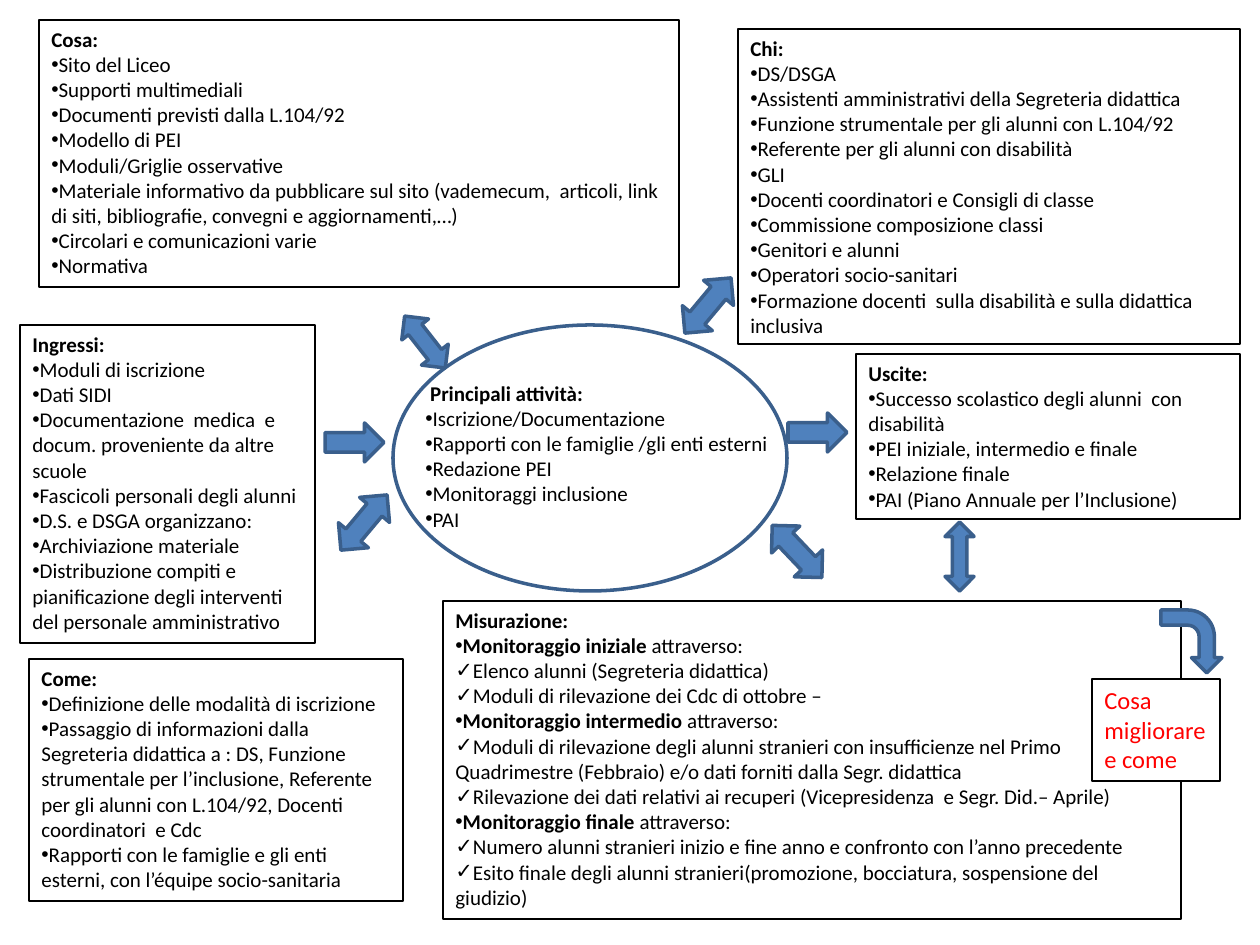
"""Build the process map slide for school inclusion activities."""
from lxml.etree import SubElement
from pptx import Presentation
from pptx.dml.color import RGBColor
from pptx.enum.shapes import MSO_SHAPE
from pptx.enum.text import MSO_AUTO_SIZE
from pptx.oxml.ns import qn
from pptx.util import Emu, Inches, Pt

BLACK = RGBColor(0x00, 0x00, 0x00)
WHITE = RGBColor(0xFF, 0xFF, 0xFF)
RED = RGBColor(0xFF, 0x00, 0x00)
BLUE = RGBColor(0x4F, 0x81, 0xBD)
DARK_BLUE = RGBColor(0x3A, 0x5F, 0x8C)
PIXELS_PER_INCH = 126

presentation = Presentation()
presentation.slide_width = Inches(10)
presentation.slide_height = Inches(7.5)
slide = presentation.slides.add_slide(presentation.slide_layouts[6])


def px(*lengths):
    return [Emu(round(length * Inches(1) / PIXELS_PER_INCH)) for length in lengths]


def add_paragraph(text_frame, text, bullet=None, bold="", size=12, color=BLACK):
    paragraph = text_frame.paragraphs[0]
    if paragraph.runs:
        paragraph = text_frame.add_paragraph()
    if bullet:
        properties = paragraph._p.get_or_add_pPr()
        properties.set("marL", "0")
        properties.set("indent", "0")
        SubElement(properties, qn("a:buFont")).set("typeface", "Arial")
        SubElement(properties, qn("a:buChar")).set("char", bullet)
    for content, is_bold in ((bold, True), (text, False)):
        if content:
            run = paragraph.add_run()
            run.text = content
            run.font.name = "Calibri"
            run.font.size = Pt(size)
            run.font.bold = is_bold
            run.font.color.rgb = color


ellipse = slide.shapes.add_shape(MSO_SHAPE.OVAL, *px(393, 325, 394, 266))
ellipse.shadow.inherit = False
ellipse.fill.background()
ellipse.line.color.rgb = DARK_BLUE
ellipse.line.width = Pt(2)

boxes = [
    ((443, 601, 738, 318), True, "Misurazione:", [
        ("•", "Monitoraggio iniziale ", "attraverso:"),
        ("✓", "", "Elenco alunni (Segreteria didattica)"),
        ("✓", "", "Moduli di rilevazione dei Cdc di ottobre –"),
        ("•", "Monitoraggio intermedio ", "attraverso:"),
        ("✓", "", "Moduli di rilevazione degli alunni stranieri con insufficienze nel Primo "
                  "Quadrimestre (Febbraio) e/o dati forniti dalla Segr. didattica"),
        ("✓", "", "Rilevazione dei dati relativi ai recuperi (Vicepresidenza  e Segr. Did.– Aprile)"),
        ("•", "Monitoraggio finale ", "attraverso:"),
        ("✓", "", "Numero alunni stranieri inizio e fine anno e confronto con l’anno precedente"),
        ("✓", "", "Esito finale degli alunni stranieri(promozione, bocciatura, sospensione del giudizio)"),
    ]),
    ((39, 20, 640, 267), True, "Cosa:", [
        "Sito del Liceo",
        "Supporti multimediali",
        "Documenti previsti dalla L.104/92",
        "Modello di PEI",
        "Moduli/Griglie osservative",
        "Materiale informativo da pubblicare sul sito (vademecum,  articoli, link di siti, "
        "bibliografie, convegni e aggiornamenti,…)",
        "Circolari e comunicazioni varie",
        "Normativa",
    ]),
    ((738, 29, 502, 315), True, "Chi:", [
        "DS/DSGA",
        "Assistenti amministrativi della Segreteria didattica",
        "Funzione strumentale per gli alunni con L.104/92",
        "Referente per gli alunni con disabilità",
        "GLI",
        "Docenti coordinatori e Consigli di classe",
        "Commissione composizione classi",
        "Genitori e alunni",
        "Operatori socio-sanitari",
        "Formazione docenti  sulla disabilità e sulla didattica inclusiva",
    ]),
    ((20, 325, 295, 318), True, "Ingressi:", [
        "Moduli di iscrizione",
        "Dati SIDI",
        "Documentazione  medica  e docum. proveniente da altre scuole",
        "Fascicoli personali degli alunni",
        "D.S. e DSGA organizzano:",
        "Archiviazione materiale",
        "Distribuzione compiti e pianificazione degli interventi del personale amministrativo",
    ]),
    ((856, 354, 384, 165), True, "Uscite:", [
        "Successo scolastico degli alunni  con disabilità",
        "PEI iniziale, intermedio e finale",
        "Relazione finale",
        "PAI (Piano Annuale per l’Inclusione)",
    ]),
    ((29, 659, 374, 242), True, "Come:", [
        "Definizione delle modalità di iscrizione",
        "Passaggio di informazioni dalla Segreteria didattica a : DS, Funzione strumentale per "
        "l’inclusione, Referente per gli alunni con L.104/92, Docenti coordinatori  e Cdc",
        "Rapporti con le famiglie e gli enti esterni, con l’équipe socio-sanitaria",
    ]),
    ((413, 374, 384, 165), False, " Principali attività:", [
        "Iscrizione/Documentazione",
        "Rapporti con le famiglie /gli enti esterni",
        "Redazione PEI",
        "Monitoraggi inclusione",
        "PAI",
    ]),
    ((1092, 679, 128, 102), True, "", []),
]
for position, outlined, heading, items in boxes:
    box = slide.shapes.add_textbox(*px(*position))
    text_frame = box.text_frame
    text_frame.word_wrap = True
    text_frame.auto_size = MSO_AUTO_SIZE.SHAPE_TO_FIT_TEXT
    if outlined:
        box.line.color.rgb = BLACK
        box.line.width = Pt(0.75)
    if heading:
        add_paragraph(text_frame, "", bold=heading)
    else:
        box.fill.solid()
        box.fill.fore_color.rgb = WHITE
        add_paragraph(text_frame, "Cosa migliorare e come", size=14, color=RED)
    for item in items:
        bullet, bold, text = ("•", "", item) if isinstance(item, str) else item
        add_paragraph(text_frame, text, bullet=bullet, bold=bold)

arrows = [
    (MSO_SHAPE.RIGHT_ARROW, (325, 423, 59, 39), 0),
    (MSO_SHAPE.RIGHT_ARROW, (788, 413, 59, 39), 0),
    (MSO_SHAPE.LEFT_RIGHT_ARROW, (328, 503, 72, 39), 309.9),
    (MSO_SHAPE.LEFT_RIGHT_ARROW, (761, 532, 72, 39), 46.4),
    (MSO_SHAPE.LEFT_RIGHT_ARROW, (925, 542, 69, 29), 90),
    (MSO_SHAPE.BENT_ARROW, (1160, 611, 63, 61), 90),
    (MSO_SHAPE.LEFT_RIGHT_ARROW, (392, 325, 66, 34), 231.9),
    (MSO_SHAPE.LEFT_RIGHT_ARROW, (672, 286, 72, 39), 309.9),
]
for preset, position, rotation in arrows:
    arrow = slide.shapes.add_shape(preset, *px(*position))
    arrow.rotation = rotation
    arrow.shadow.inherit = False
    arrow.fill.solid()
    arrow.fill.fore_color.rgb = BLUE
    arrow.line.color.rgb = DARK_BLUE
    arrow.line.width = Pt(2)

presentation.save("out.pptx")
